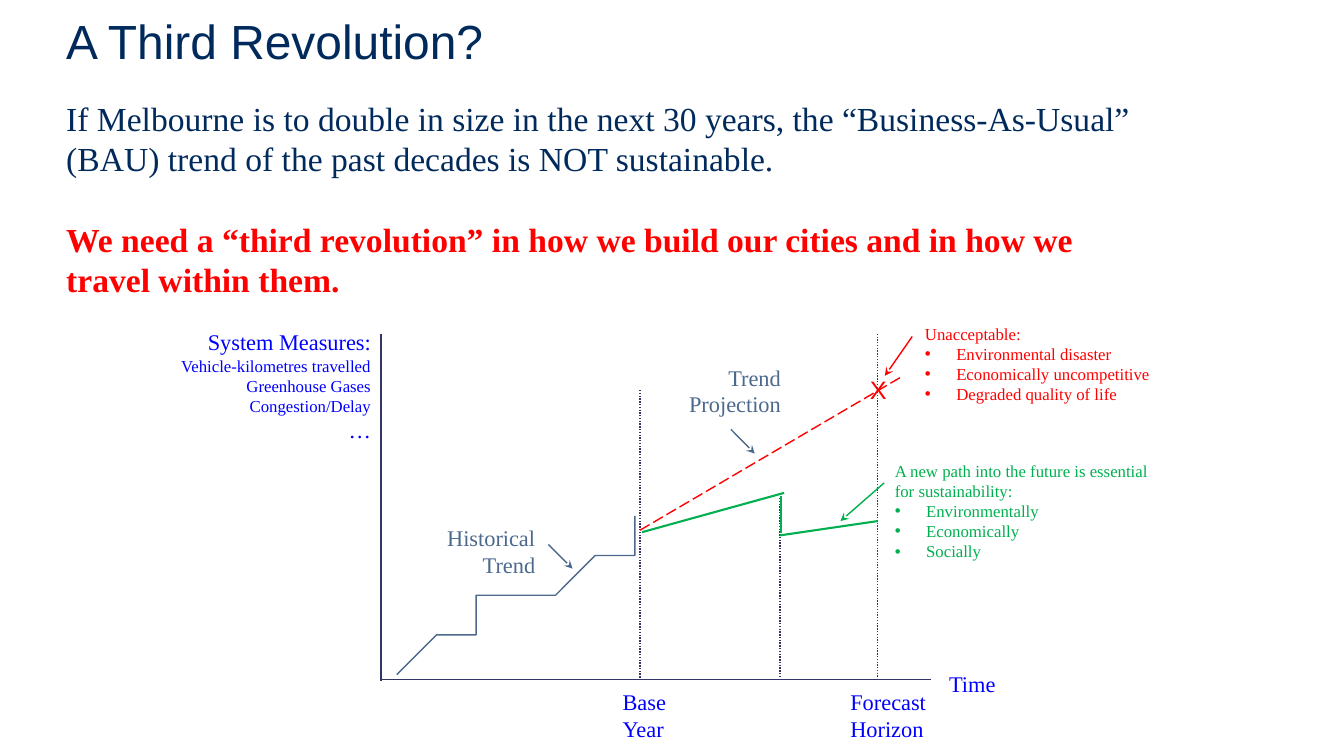
from dataclasses import dataclass

from lxml import etree
from pptx import Presentation
from pptx.dml.color import RGBColor
from pptx.enum.dml import MSO_LINE
from pptx.enum.shapes import MSO_CONNECTOR
from pptx.enum.text import MSO_ANCHOR, MSO_AUTO_SIZE, PP_ALIGN
from pptx.oxml.ns import qn
from pptx.util import Cm, Pt


@dataclass(frozen=True)
class Theme:
    navy: str = "002A5C"
    axis: str = "333366"
    slate: str = "4C698D"
    blue: str = "0000FF"
    red: str = "FF0000"
    green: str = "00B050"
    serif: str = "Times New Roman"
    sans: str = "Arial"
    title: float = 34.2
    body: float = 24
    mark: float = 18
    label: float = 16
    note: float = 12
    thin: float = 1
    thick: float = 1.5


THEME = Theme()


def write(para, text, *, size, color, font=THEME.serif, bold=False,
          align=PP_ALIGN.LEFT, bullet=False, before=0):
    """Fill one paragraph with formatted text."""
    if bullet:
        properties = para._p.get_or_add_pPr()
        properties.set("marL", str(Cm(0.79)))
        properties.set("indent", str(-Cm(0.79)))
        bullet_font = etree.SubElement(properties, qn("a:buFont"))
        bullet_font.set("typeface", THEME.sans)
        etree.SubElement(properties, qn("a:buChar")).set("char", "•")
    para.alignment = align
    if before:
        para.space_before = Pt(before)
    span = para.add_run()
    span.text = text
    span.font.name = font
    span.font.size = Pt(size)
    span.font.bold = bold
    span.font.color.rgb = RGBColor.from_string(color)


class Slide:
    def __init__(self, page, theme):
        self.page = page
        self.theme = theme

    def text(self, left, top, width, height, lines, *, wrap=False,
             anchor=MSO_ANCHOR.TOP, grow=True, **style):
        """Add a text box; each line is a text or a (text, overrides) pair."""
        box = self.page.shapes.add_textbox(Cm(left), Cm(top), Cm(width), Cm(height))
        frame = box.text_frame
        frame.word_wrap = wrap
        frame.auto_size = MSO_AUTO_SIZE.SHAPE_TO_FIT_TEXT if grow else MSO_AUTO_SIZE.NONE
        frame.vertical_anchor = anchor
        for index, line in enumerate(lines):
            text, overrides = (line, {}) if isinstance(line, str) else line
            para = frame.add_paragraph() if index else frame.paragraphs[0]
            write(para, text, **{**style, **overrides})

    def label(self, left, top, width, height, lines, color, align=PP_ALIGN.LEFT):
        self.text(left, top, width, height, lines, size=self.theme.label,
                  color=color, align=align)

    def note(self, left, top, width, height, heading, points, color, wrap=False):
        lines = [heading] + [(point, {"bullet": True}) for point in points]
        self.text(left, top, width, height, lines, wrap=wrap,
                  size=self.theme.note, color=color)

    def line(self, start, end, color, width=THEME.thin, dash=None, arrow=False):
        connector = self.page.shapes.add_connector(
            MSO_CONNECTOR.STRAIGHT, *map(Cm, start), *map(Cm, end))
        connector.line.color.rgb = RGBColor.from_string(color)
        connector.line.width = Pt(width)
        if dash:
            connector.line.dash_style = dash
        if arrow:
            outline = connector.line._get_or_add_ln()
            etree.SubElement(outline, qn("a:tailEnd")).set("type", "stealth")
        etree.SubElement(connector._element.spPr, qn("a:effectLst"))

    def curve(self, points, color):
        builder = self.page.shapes.build_freeform(*points[0], scale=float(Cm(1)))
        builder.add_line_segments(points[1:], close=False)
        shape = builder.convert_to_shape()
        shape.shadow.inherit = False
        shape.fill.background()
        shape.line.color.rgb = RGBColor.from_string(color)
        shape.line.width = Pt(self.theme.thin)


HISTORY = [
    (9.65, 17.12), (9.75, 16.94), (9.86, 16.84), (10.01, 16.76), (10.21, 16.66),
    (10.49, 16.56), (10.64, 16.48), (10.77, 16.46), (10.92, 16.41), (11.05, 16.38),
    (11.23, 16.31), (11.4, 16.18), (11.61, 16.05), (11.79, 15.95), (11.91, 15.82),
    (12.04, 15.77), (12.22, 15.65), (12.4, 15.57), (12.5, 15.49), (12.65, 15.47),
    (12.75, 15.32), (12.93, 15.29), (13.28, 15.21), (13.49, 15.14), (13.74, 15.04),
    (14.02, 14.91), (14.2, 14.78), (14.33, 14.68), (14.5, 14.55), (14.66, 14.48),
    (14.78, 14.3), (14.94, 14.1), (15.09, 13.92), (15.19, 13.82), (15.24, 13.69),
    (15.37, 13.69), (15.47, 13.69), (15.57, 13.59), (15.67, 13.59), (15.77, 13.51),
    (15.88, 13.49), (16, 13.41), (16.1, 13.36),
]


def main():
    deck = Presentation()
    deck.slide_width, deck.slide_height = Cm(33.87), Cm(19.05)
    theme = THEME
    slide = Slide(deck.slides.add_slide(deck.slide_layouts[6]), theme)

    # Title and message
    slide.text(1.42, 0.1, 22.86, 1.85, ["A Third Revolution?"], wrap=True, grow=False,
               anchor=MSO_ANCHOR.MIDDLE, size=theme.title, color=theme.navy, font=theme.sans)
    slide.text(1.42, 2.34, 27.53, 5.38, [
        "If Melbourne is to double in size in the next 30 years, the “Business-As-Usual” "
        "(BAU) trend of the past decades is NOT sustainable.",
        ("We need a “third revolution” in how we build our cities and in how we "
         "travel within them.", {"color": theme.red, "bold": True, "before": 28.8}),
    ], wrap=True, size=theme.body, color=theme.navy)

    # Axes and year markers
    axis_x, axis_y = 9.6, 17.12
    base, step, horizon = 16.13, 19.66, 22.12
    slide.line((axis_x, 8.41), (axis_x, 17.17), theme.axis)
    slide.line((axis_x, axis_y), (23.47, axis_y), theme.axis)
    for year, top in ((base, 9.83), (step, 12.55), (horizon, 8.41)):
        slide.line((year, top), (year, 17.09), theme.axis, dash=MSO_LINE.ROUND_DOT)

    # Historical trend, projection and new path
    slide.curve(HISTORY, theme.slate)
    slide.line((base, 13.36), (22.76, 9.47), theme.red, dash=MSO_LINE.LONG_DASH)
    for start, end in (((16.18, 13.41), (19.76, 12.42)),
                       ((19.69, 12.5), (19.69, 13.44)),
                       ((step, 13.49), (horizon, 13.13))):
        slide.line(start, end, theme.green, theme.thick)

    # Axis labels
    small = {"size": theme.note}
    slide.label(4.24, 8.15, 5.36, 3.18, [
        "System Measures:", ("Vehicle-kilometres travelled", small),
        ("Greenhouse Gases", small), ("Congestion/Delay", small), "…",
    ], theme.blue, PP_ALIGN.RIGHT)
    slide.label(23.67, 16.76, 1.7, 0.94, ["Time"], theme.blue)
    slide.label(15.44, 17.22, 1.63, 1.63, ["Base", "Year"], theme.blue)
    slide.label(21.18, 17.22, 2.46, 1.63, ["Forecast", "Horizon"], theme.blue)

    # Trend labels
    slide.label(11, 13.08, 2.74, 1.63, ["Historical", "Trend"], theme.slate, PP_ALIGN.RIGHT)
    slide.label(17.09, 9.04, 2.84, 1.63, ["Trend", "Projection"], theme.slate, PP_ALIGN.RIGHT)

    # Outcome notes
    slide.note(22.3, 11.48, 7.04, 2.82,
               "A new path into the future is essential for sustainability:",
               ["Environmentally", "Economically", "Socially"], theme.green, wrap=True)
    slide.note(23.06, 8.03, 6.27, 2.31, "Unacceptable:",
               ["Environmental disaster", "Economically uncompetitive",
                "Degraded quality of life"], theme.red)
    slide.text(21.67, 9.32, 0.94, 1.02, ["X"], size=theme.mark,
               color=theme.red, font=theme.sans)

    # Pointers from labels to lines
    for start, end, color in (((13.82, 13.72), (14.43, 14.33), theme.slate),
                              ((18.42, 10.82), (19.02, 11.43), theme.slate),
                              ((22.28, 12.17), (21.18, 13.13), theme.green),
                              ((22.99, 8.48), (22.3, 9.47), theme.red)):
        slide.line(start, end, color, arrow=True)

    deck.save("out.pptx")


if __name__ == "__main__":
    main()
